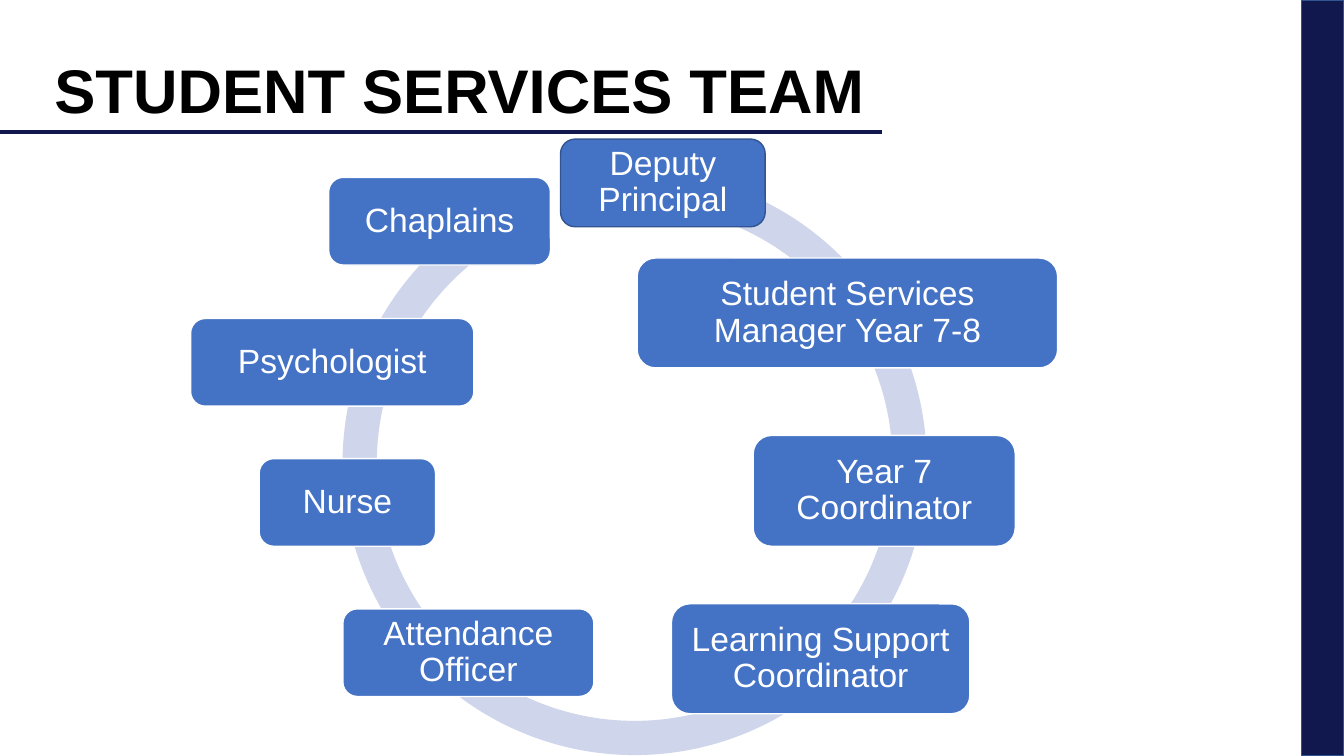
from lxml import etree
from pptx import Presentation
from pptx import util as u
from pptx.dml.color import RGBColor
from pptx.enum import shapes, text
from pptx.oxml.ns import qn

PX = 9144  # 100 px to the inch
COLORS = {"navy": "10184E", "outline": "325491", "ring": "CFD5EA",
          "role": "4472C4", "white": "FFFFFF", "black": "000000"}
SHAPE = shapes.MSO_SHAPE

# label, left, top, width, height, outline
ROLES = [
    ("Deputy Principal", 556, 138, 203, 87, "outline"),
    ("Student Services Manager Year 7-8", 632, 256, 417, 109, "white"),
    ("Year 7 Coordinator", 747, 432, 260, 110, "white"),
    ("Learning Support Coordinator", 666, 599, 296, 109, "white"),
    ("Attendance Officer", 340, 604, 249, 87, "white"),
    ("Nurse", 257, 455, 175, 87, "white"),
    ("Psychologist", 189, 316, 281, 87, "white"),
    ("Chaplains", 326, 176, 220, 87, "white"),
]


def add_block(kind, left, top, width, height, fill, outline=None):
    block = slide.shapes.add_shape(kind, left * PX, top * PX, width * PX, height * PX)
    block.shadow.inherit = False
    block.fill.solid()
    block.fill.fore_color.rgb = RGBColor.from_string(COLORS[fill])
    if outline:
        block.line.color.rgb = RGBColor.from_string(COLORS[outline])
        block.line.width = u.Pt(1)
    else:
        block.line.fill.background()
    return block


def write(frame, words, size, color, align, bold=False):
    frame.word_wrap = True
    frame.auto_size = text.MSO_AUTO_SIZE.NONE
    paragraph = frame.paragraphs[0]
    paragraph.alignment = align
    paragraph.line_spacing = 0.9
    run = paragraph.add_run()
    run.text = words
    run.font.name = "Arial"
    run.font.size = u.Pt(size)
    run.font.bold = bold
    run.font.color.rgb = RGBColor.from_string(COLORS[color])


prs = Presentation()
prs.slide_width, prs.slide_height = 1333 * PX, 750 * PX
slide = prs.slides.add_slide(prs.slide_layouts[5])

# Side band and rule under the title
add_block(SHAPE.RECTANGLE, 1291, 0, 42, 750, "navy", "outline")
title_rule = slide.shapes.add_connector(
    shapes.MSO_CONNECTOR.STRAIGHT, 0, 131 * PX, 875 * PX, 131 * PX)
title_rule.line.color.rgb = RGBColor.from_string(COLORS["navy"])
title_rule.line.width = u.Pt(3)
etree.SubElement(title_rule._element.spPr, qn("a:effectLst"))

# Ring behind the roles
ring = add_block(SHAPE.CIRCULAR_ARROW, 321, 151, 617, 617, "ring")
for index, value in enumerate((0.055, 3.307, 144.319, 169.984, 0.058)):
    ring.adjustments[index] = value

for label, left, top, width, height, outline in ROLES:
    role = add_block(SHAPE.ROUNDED_RECTANGLE, left, top, width, height, "role", outline)
    frame = role.text_frame
    frame.margin_left = frame.margin_right = 10 * PX
    frame.margin_top = frame.margin_bottom = 10 * PX
    frame.vertical_anchor = text.MSO_ANCHOR.MIDDLE
    write(frame, label, 24, "white", text.PP_ALIGN.CENTER)

title = slide.shapes.title
title.left, title.top, title.width, title.height = 44 * PX, 34 * PX, 1150 * PX, 97 * PX
title.text_frame.vertical_anchor = text.MSO_ANCHOR.BOTTOM
write(title.text_frame, "STUDENT SERVICES TEAM", 44, "black", text.PP_ALIGN.LEFT, bold=True)

prs.save("out.pptx")
